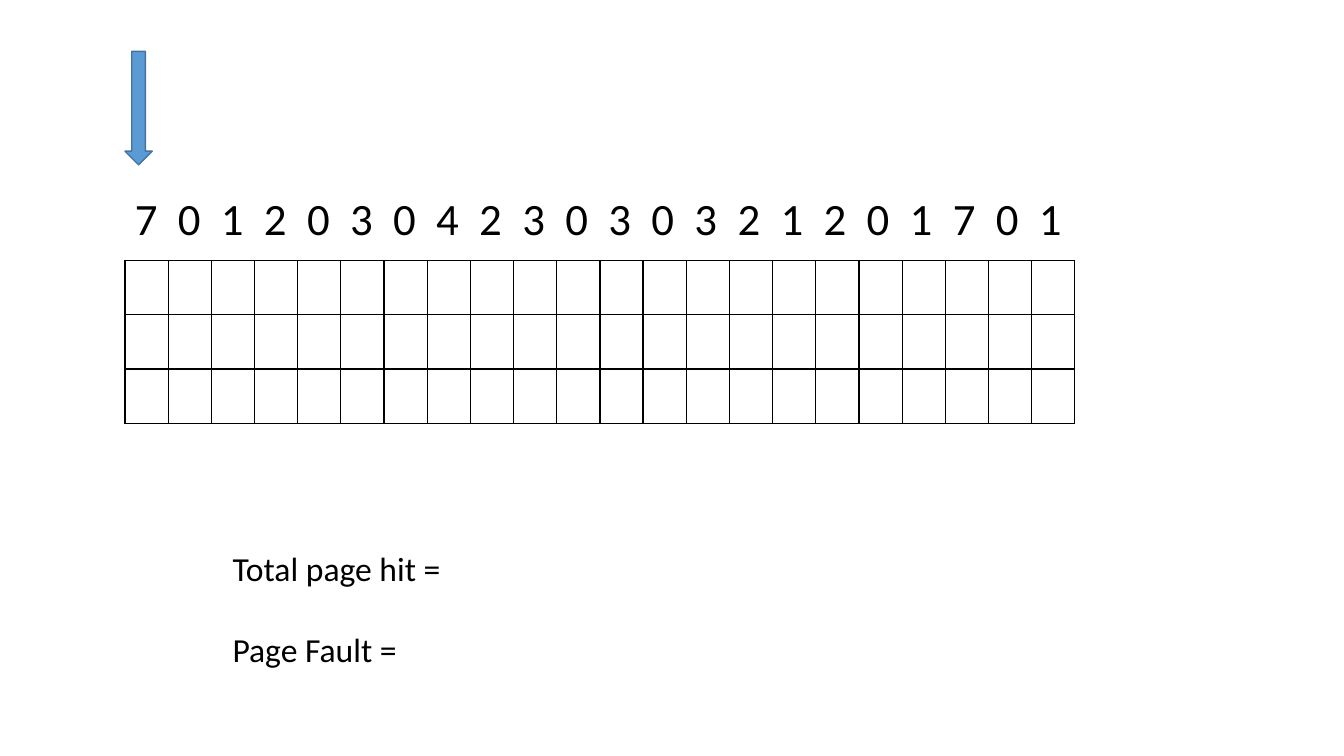
import pptx
import pptx.dml.color
import pptx.enum.shapes
import pptx.oxml
import pptx.oxml.ns
import pptx.util
from lxml import etree

BLACK = pptx.dml.color.RGBColor(0x00, 0x00, 0x00)
ARROW_FILL = pptx.dml.color.RGBColor(0x5B, 0x9B, 0xD5)
ARROW_LINE = pptx.dml.color.RGBColor(0x43, 0x73, 0x9E)
FONT = "Calibri"
PX = 9525  # EMU in one px, 96 px to the inch

REFERENCES = "7012030423030321201701"
REFERENCES = "7012030423" + "030321201701"
FRAMES = 3
DIGIT_PITCH = 41


def px(n):
    return n * PX


def add_text(s, box, size):
    tf = s.shapes.add_textbox(*map(px, box)).text_frame
    tf.word_wrap = True

    def add_line(p, text):
        r = p.add_run()
        r.text = text
        r.font.name = FONT
        r.font.size = pptx.util.Pt(size)
        r.font.color.rgb = BLACK

    return tf, add_line


def pointer(s, box):
    sp = s.shapes.add_shape(pptx.enum.shapes.MSO_SHAPE.DOWN_ARROW, *map(px, box))
    sp.shadow.inherit = False
    sp.fill.solid()
    sp.fill.fore_color.rgb = ARROW_FILL
    sp.line.color.rgb = ARROW_LINE
    sp.line.width = pptx.util.Pt(1)


def reference_string(s, box):
    tf, add_line = add_text(s, box, 32)
    p = tf.paragraphs[0]
    # One tab stop per reference after the first
    tabs = etree.SubElement(p._p.get_or_add_pPr(), pptx.oxml.ns.qn("a:tabLst"))
    for i in range(1, len(REFERENCES)):
        etree.SubElement(tabs, pptx.oxml.ns.qn("a:tab"),
                         pos=str(px(DIGIT_PITCH * i)), algn="l")
    add_line(p, "\t".join(REFERENCES))


def set_borders(cell):
    tcPr = cell._tc.get_or_add_tcPr()
    for i, side in enumerate(("lnL", "lnR", "lnT", "lnB")):
        tcPr.insert(i, pptx.oxml.parse_xml(
            f'<a:{side} {pptx.oxml.ns.nsdecls("a")} w="12700"><a:solidFill>'
            f'<a:srgbClr val="{BLACK}"/></a:solidFill></a:{side}>'))


def frame_table(s, box):
    cols = len(REFERENCES)
    table = s.shapes.add_table(FRAMES, cols, *map(px, box)).table
    table.first_row = False
    table.horz_banding = False
    for col in table.columns:
        col.width = px(box[2]) // cols
    for row in table.rows:
        row.height = px(box[3]) // FRAMES
    for cell in table.iter_cells():
        cell.fill.background()
        set_borders(cell)


def totals(s, box):
    tf, add_line = add_text(s, box, 24)
    add_line(tf.paragraphs[0], "Total page hit =")
    p = tf.add_paragraph()
    p.space_before = pptx.util.Pt(29)
    add_line(p, "Page Fault =")


def main():
    prs = pptx.Presentation()
    prs.slide_width, prs.slide_height = px(1280), px(720)
    s = prs.slides.add_slide(prs.slide_layouts[6])
    frame_table(s, (119, 248, 905, 155))
    reference_string(s, (119, 177, 1029, 61))
    totals(s, (212, 517, 522, 126))
    pointer(s, (119, 49, 26, 108))
    prs.save("out.pptx")


if __name__ == "__main__":
    main()
